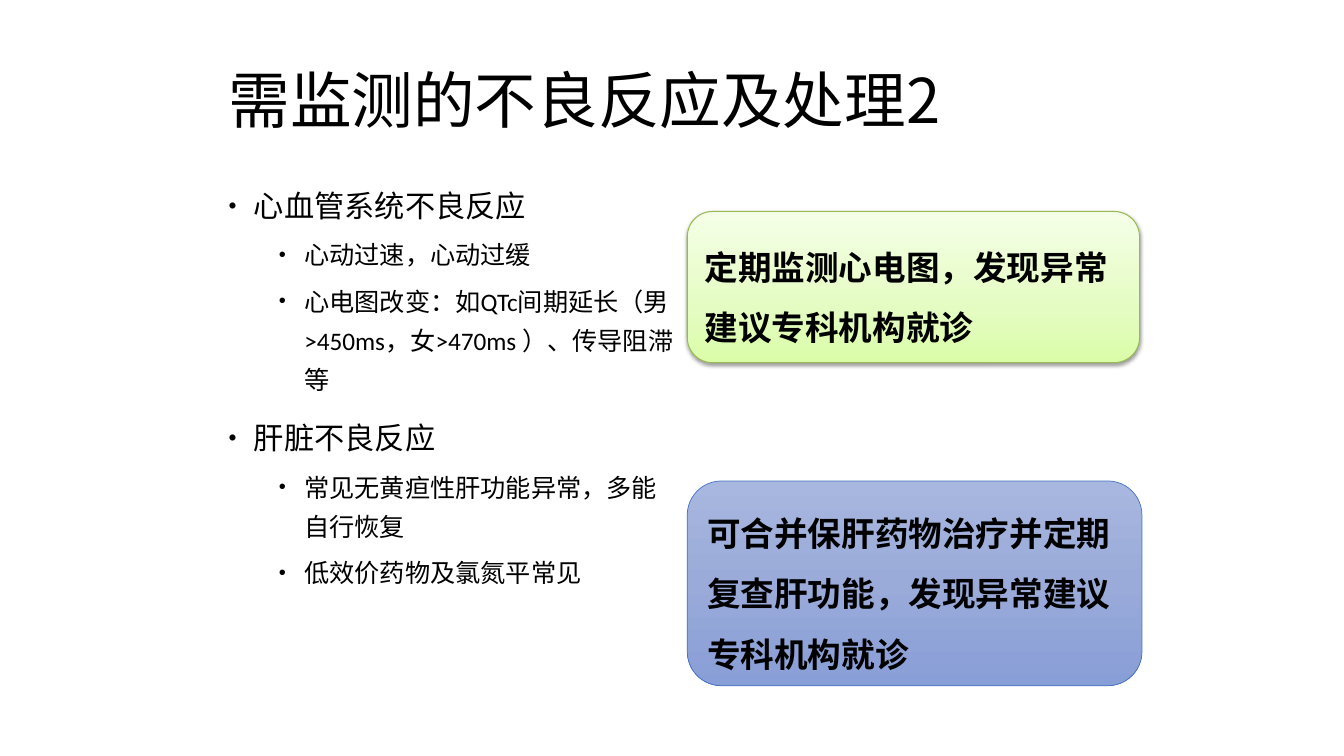
from dataclasses import dataclass

from pptx import Presentation
from pptx.dml.color import RGBColor
from pptx.enum.shapes import MSO_SHAPE
from pptx.enum.text import MSO_ANCHOR, PP_ALIGN
from pptx.oxml import parse_xml
from pptx.oxml.ns import nsdecls, qn
from pptx.oxml.xmlchemy import OxmlElement
from pptx.util import Cm, Pt


@dataclass(frozen=True)
class Theme:
    latin: str = "Calibri"
    chinese: str = "Noto Sans CJK SC"
    text: str = "000000"
    green_line: str = "98B955"
    blue_line: str = "4472C4"
    green_stops: tuple = ((0, "DAFDA7"), (35, "E4FCC2"), (100, "F5FFE7"))
    blue_stops: tuple = ((0, "A8B7DF"), (50, "9AABD9"), (100, "889ED7"))
    title_size: float = 44
    topic_size: float = 21.6
    detail_size: float = 18
    advice_size: float = 24


THEME = Theme()

REACTIONS = (
    ("心血管系统不良反应", (
        "心动过速，心动过缓",
        "心电图改变：如QTc间期延长（男>450ms，女>470ms ）、传导阻滞等",
    )),
    ("肝脏不良反应", (
        "常见无黄疸性肝功能异常，多能自行恢复",
        "低效价药物及氯氮平常见",
    )),
)


def style_paragraph(para, size, spacing, latin=THEME.latin, bold=False):
    para.alignment = PP_ALIGN.LEFT
    para.line_spacing = spacing
    font = para.font
    font.size = Pt(size)
    font.bold = bold
    font.color.rgb = RGBColor.from_string(THEME.text)
    font.name = latin
    east_asian = OxmlElement("a:ea")
    east_asian.set("typeface", THEME.chinese)
    para._p.pPr.find(qn("a:defRPr")).append(east_asian)


def add_text_frame(slide, left, top, width, height):
    frame = slide.shapes.add_textbox(left, top, width, height).text_frame
    frame.word_wrap = True
    return frame


def add_title(slide, text):
    frame = add_text_frame(slide, Cm(5.51), Cm(1.27), Cm(22.86), Cm(2.67))
    frame.vertical_anchor = MSO_ANCHOR.MIDDLE
    para = frame.paragraphs[0]
    para.text = text
    style_paragraph(para, THEME.title_size, 0.9, latin=THEME.chinese)


def set_bullet(para, indent, percent):
    properties = para._p.get_or_add_pPr()
    properties.set("marL", str(indent))
    properties.set("indent", str(-Cm(0.64)))
    for tag, name, value in (
        ("a:buSzPct", "val", str(percent * 1000)),
        ("a:buFont", "typeface", "Arial"),
        ("a:buChar", "char", "•"),
    ):
        bullet = OxmlElement(tag)
        bullet.set(name, value)
        properties.append(bullet)


def add_bullet(frame, text, level):
    para = frame.paragraphs[0]
    if para.runs:
        para = frame.add_paragraph()
    para.text = text
    para.level = level
    para.space_before = Pt((10, 5)[level])
    set_bullet(para, (Cm(0.64), Cm(1.91))[level], (75, 80)[level])
    style_paragraph(para, (THEME.topic_size, THEME.detail_size)[level], 1.3)


def add_reactions(slide, reactions):
    frame = add_text_frame(slide, Cm(5.51), Cm(4.32), Cm(11.84), Cm(10.8))
    for topic, details in reactions:
        add_bullet(frame, topic, 0)
        for detail in details:
            add_bullet(frame, detail, 1)


def set_gradient(shape, stops, angle):
    """Fill with (percent, colour) stops; the angle runs clockwise."""
    shape.fill.gradient()
    stop_list = "".join(
        f'<a:gs pos="{percent * 1000}"><a:srgbClr val="{colour}"/></a:gs>'
        for percent, colour in stops
    )
    gradient = parse_xml(
        f'<a:gradFill {nsdecls("a")} rotWithShape="1"><a:gsLst>{stop_list}</a:gsLst>'
        f'<a:lin ang="{angle * 60000}" scaled="0"/></a:gradFill>'
    )
    properties = shape._element.spPr
    properties.replace(properties.find(qn("a:gradFill")), gradient)


def add_shadow(shape):
    shadow = parse_xml(
        f'<a:outerShdw {nsdecls("a")} blurRad="{Pt(3.1)}" dist="{Pt(1.6)}" '
        'dir="5400000" rotWithShape="0"><a:srgbClr val="000000">'
        '<a:alpha val="38000"/></a:srgbClr></a:outerShdw>'
    )
    shape._element.spPr.find(qn("a:effectLst")).append(shadow)


def add_advice(slide, text, top, width, height, stops, angle, line, line_width):
    box = slide.shapes.add_shape(
        MSO_SHAPE.ROUNDED_RECTANGLE, Cm(17.32), top, width, height)
    set_gradient(box, stops, angle)
    box.line.color.rgb = RGBColor.from_string(line)
    box.line.width = Pt(line_width)
    box.shadow.inherit = False
    frame = box.text_frame
    frame.word_wrap = True
    frame.vertical_anchor = MSO_ANCHOR.MIDDLE
    para = frame.paragraphs[0]
    para.text = text
    style_paragraph(para, THEME.advice_size, 1.5, bold=True)
    # The shape style makes text white unless the run has its own colour.
    para.runs[0].font.color.rgb = RGBColor.from_string(THEME.text)
    return box


def main():
    deck = Presentation()
    deck.slide_width, deck.slide_height = Cm(33.87), Cm(19.05)
    slide = deck.slides.add_slide(deck.slide_layouts[6])
    add_title(slide, "需监测的不良反应及处理2")
    add_reactions(slide, REACTIONS)
    heart_advice = add_advice(
        slide, "定期监测心电图，发现异常建议专科机构就诊",
        Cm(5.33), Cm(11.4), Cm(3.81),
        THEME.green_stops, 270, THEME.green_line, 0.75)
    add_shadow(heart_advice)
    add_advice(
        slide, "可合并保肝药物治疗并定期复查肝功能，发现异常建议专科机构就诊",
        Cm(12.12), Cm(11.46), Cm(5.16),
        THEME.blue_stops, 90, THEME.blue_line, 0.5)
    deck.save("out.pptx")


if __name__ == "__main__":
    main()
